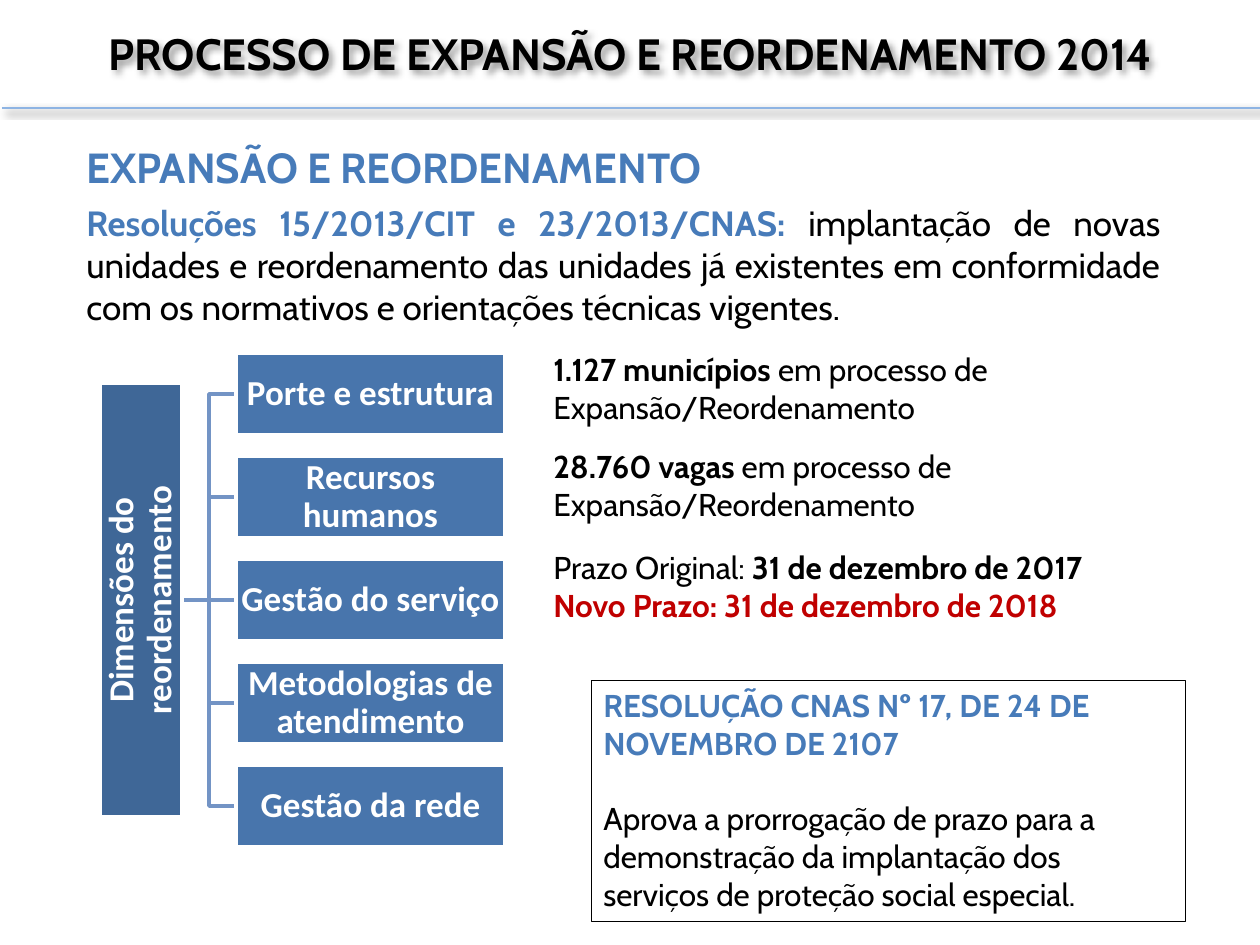
from lxml import etree
from pptx import Presentation, util as u
from pptx.dml.color import RGBColor
from pptx.enum import shapes, text
from pptx.oxml.ns import qn

# Content: each paragraph is a list of (text, format) runs
BLUE, RED = "477BB9", "C00000"
BOLD, HEADING = {"bold": True}, {"bold": True, "color": BLUE}

TITLE = [[("PROCESSO DE EXPANSÃO E REORDENAMENTO 2014", BOLD)]]
SUBTITLE = [[("EXPANSÃO E REORDENAMENTO", HEADING)]]
RESOLUTIONS = [[
    ("Resoluções 15/2013/CIT e 23/2013/CNAS: ", HEADING),
    ("implantação de novas unidades e reordenamento das unidades já existentes "
     "em conformidade com os normativos e orientações técnicas vigentes.", {}),
]]
FIGURES = [
    [("1.127 municípios ", BOLD), ("em processo de Expansão/Reordenamento", {})],
    [("28.760 vagas ", BOLD), ("em processo de Expansão/Reordenamento", {})],
]
DEADLINES = [
    [("Prazo Original: ", {}), ("31 de dezembro de 2017", BOLD)],
    [("Novo Prazo: 31 de dezembro de 2018", {"bold": True, "color": RED})],
]
NOTICE = [
    [("RESOLUÇÃO CNAS Nº 17, DE 24 DE NOVEMBRO DE 2107", HEADING)],
    [("Aprova a prorrogação de prazo para a demonstração da implantação "
      "dos serviços de proteção social especial.", {})],
]
ROOT = "Dimensões do reordenamento"
DIMENSIONS = ["Porte e estrutura", "Recursos humanos", "Gestão do serviço",
              "Metodologias de atendimento", "Gestão da rede"]

# Layout in px, 126 to the inch
SCALE = 914400 / 126
BAR = 82
ROOT_LEFT, ROOT_HEIGHT = 100, 434
BOX_LEFT, BOX_TOP, BOX_WIDTH, BOX_STEP = 236, 353, 269, 103

ALIGN = text.PP_ALIGN


def px(n):
    return u.Emu(round(n * SCALE))


def rgb(value):
    return RGBColor.from_string(value)


def write(shape, paragraphs, size, font="Cabin", color="000000", align=ALIGN.LEFT,
          anchor=text.MSO_ANCHOR.TOP, before=(0, 0), spacing=None, inset=None, wrap=True):
    """Fill a shape with text; before is the gap above the first and later paragraphs."""
    frame = shape.text_frame
    frame.word_wrap = wrap
    frame.vertical_anchor = anchor
    if inset is not None:
        frame.margin_left = frame.margin_right = px(inset)
        frame.margin_top = frame.margin_bottom = px(inset)
    for i, runs in enumerate(paragraphs):
        para = frame.add_paragraph() if i else frame.paragraphs[0]
        para.alignment = align
        para.space_before = u.Pt(before[min(i, 1)])
        if spacing:
            para.line_spacing = spacing
        for words, look in runs:
            run = para.add_run()
            run.text = words
            run.font.name, run.font.size = font, u.Pt(size)
            run.font.bold = look.get("bold", False)
            run.font.color.rgb = rgb(look.get("color", color))
    return shape


def text_box(slide, box, paragraphs, size, **look):
    return write(slide.shapes.add_textbox(*map(px, box)), paragraphs, size, **look)


def rectangle(slide, box, fill, line, width):
    rect = slide.shapes.add_shape(shapes.MSO_SHAPE.RECTANGLE, *map(px, box))
    rect.shadow.inherit = False
    rect.fill.solid()
    rect.fill.fore_color.rgb = rgb(fill)
    rect.line.color.rgb = rgb(line)
    rect.line.width = u.Pt(width)
    return rect


def connector(slide, kind, ends, color, width):
    line = slide.shapes.add_connector(kind, *map(px, ends))
    line.line.color.rgb = rgb(color)
    line.line.width = u.Pt(width)
    etree.SubElement(line._element.spPr, qn("a:effectLst"))
    return line


def cast_shadow(shape):
    props = shape._element.spPr
    effects = props.find(qn("a:effectLst"))
    if effects is None:
        effects = etree.SubElement(props, qn("a:effectLst"))
    shadow = etree.SubElement(effects, qn("a:outerShdw"), blurRad=str(u.Pt(4)),
                              dist=str(u.Pt(3)), dir="2700000", rotWithShape="0")
    black = etree.SubElement(shadow, qn("a:srgbClr"), val="000000")
    etree.SubElement(black, qn("a:alpha"), val="40000")


def bar(slide, box, fill, label):
    rect = rectangle(slide, box, fill, "FFFFFF", 2)
    return write(rect, [[(label, BOLD)]], 20, font="Calibri", color="FFFFFF",
                 align=ALIGN.CENTER, anchor=text.MSO_ANCHOR.MIDDLE, spacing=0.9, inset=1)


def dimension_tree(slide):
    middle = BOX_TOP + BOX_STEP * (len(DIMENSIONS) - 1) / 2 + BAR / 2
    # Branches come first so that the white outlines cover their ends
    branches = []
    for i in range(len(DIMENSIONS)):
        y = BOX_TOP + i * BOX_STEP + BAR / 2
        kind = shapes.MSO_CONNECTOR.STRAIGHT if y == middle else shapes.MSO_CONNECTOR.ELBOW
        branches.append(connector(slide, kind, (ROOT_LEFT + BAR, middle, BOX_LEFT, y),
                                  "7394C5", 2))
    root = bar(slide, (ROOT_LEFT, middle - ROOT_HEIGHT / 2, BAR, ROOT_HEIGHT), "3F6797", ROOT)
    root.text_frame._txBody.bodyPr.set("vert", "vert270")
    for i, (label, branch) in enumerate(zip(DIMENSIONS, branches)):
        box = bar(slide, (BOX_LEFT, BOX_TOP + i * BOX_STEP, BOX_WIDTH, BAR), "4875AC", label)
        branch.begin_connect(root, 3)
        branch.end_connect(box, 1)


def main():
    prs = Presentation()
    prs.slide_width, prs.slide_height = px(1260), px(945)
    slide = prs.slides.add_slide(prs.slide_layouts[6])

    # Header
    title = text_box(slide, (0, 0, 1260, 105), TITLE, 25, align=ALIGN.CENTER,
                     anchor=text.MSO_ANCHOR.MIDDLE, wrap=False)
    rule = connector(slide, shapes.MSO_CONNECTOR.STRAIGHT, (2, 108, 1264, 108), "8EB4E3", 1.5)
    for part in (title, rule):
        cast_shadow(part)

    # Introduction
    text_box(slide, (74, 135, 1160, 63), SUBTITLE, 24, before=(18, 0))
    text_box(slide, (74, 195, 1099, 155), RESOLUTIONS, 20, align=ALIGN.JUSTIFY, before=(4, 0))

    dimension_tree(slide)

    # Figures and deadlines
    text_box(slide, (541, 344, 556, 186), FIGURES, 18, before=(12, 12))
    text_box(slide, (541, 542, 621, 89), DEADLINES, 18)

    # Notice of the new resolution
    notice = rectangle(slide, (591, 680, 595, 242), "FFFFFF", "000000", 0.5)
    write(notice, NOTICE, 18, before=(0, 21.5))

    prs.save("out.pptx")


if __name__ == "__main__":
    main()
